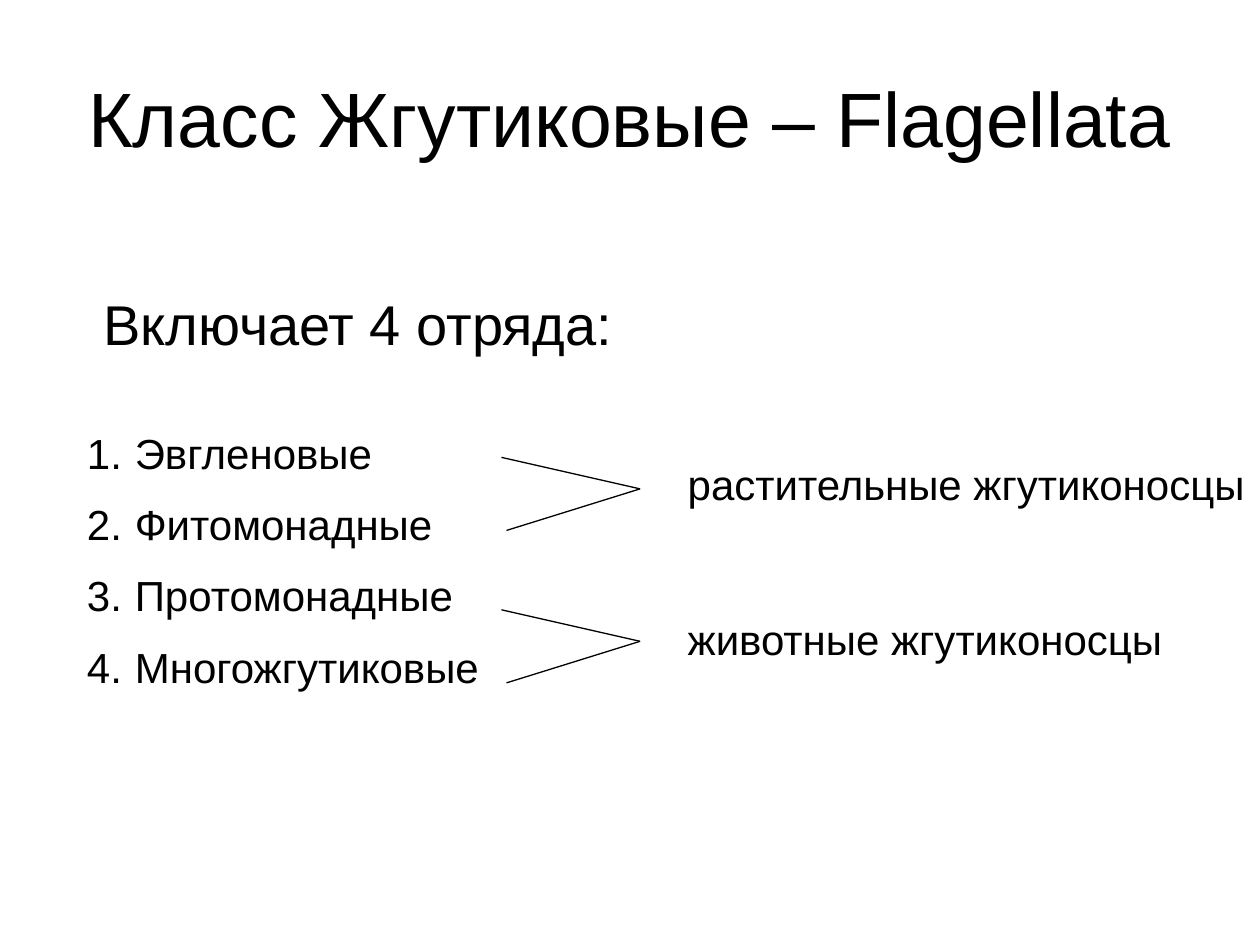
from lxml import etree
from pptx import Presentation
from pptx import util as u
from pptx.dml.color import RGBColor
from pptx.enum import shapes, text
from pptx.oxml.ns import qn

INK = "000000"
ORDERS = ["Эвгленовые", "Фитомонадные", "Протомонадные", "Многожгутиковые"]
GROUPS = ["растительные жгутиконосцы", "животные жгутиконосцы"]


def paint(fmt, tone):
    """Set a colour format from a hex string."""
    fmt.rgb = RGBColor.from_string(tone)


def write(para, words, size):
    """Add one run of text to a paragraph."""
    run = para.add_run()
    run.text = words
    run.font.name = "Arial"
    run.font.size = u.Pt(size)
    paint(run.font.color, INK)


def place(shape, box):
    """Move a shape to a box given in inches."""
    shape.left, shape.top, shape.width, shape.height = map(u.Inches, box)


def head(slide, box, words):
    """Fill the title placeholder."""
    title = slide.shapes.title
    place(title, box)
    frame = title.text_frame
    frame.auto_size = text.MSO_AUTO_SIZE.NONE
    frame.vertical_anchor = text.MSO_ANCHOR.MIDDLE
    para = frame.paragraphs[0]
    para.alignment = text.PP_ALIGN.CENTER
    write(para, words, 44)


def label(slide, box, words, size, wrap=True):
    """Add a line of plain text."""
    shape = slide.shapes.add_textbox(*map(u.Inches, box))
    shape.text_frame.word_wrap = wrap
    write(shape.text_frame.paragraphs[0], words, size)


def roster(slide, box, items):
    """Fill the body placeholder with a numbered list."""
    body = slide.placeholders[1]
    place(body, box)
    frame = body.text_frame
    frame.auto_size = text.MSO_AUTO_SIZE.NONE
    frame.vertical_anchor = text.MSO_ANCHOR.TOP
    frame.margin_right = 0
    for i, item in enumerate(items):
        para = frame.add_paragraph() if i else frame.paragraphs[0]
        props = para._p.get_or_add_pPr()
        props.set("marL", str(u.Inches(0.38)))
        props.set("indent", str(-u.Inches(0.38)))
        font = etree.SubElement(props, qn("a:buFont"))
        font.set("typeface", "Arial")
        mark = etree.SubElement(props, qn("a:buAutoNum"))
        mark.set("type", "arabicPeriod")
        para.space_before = u.Pt(12 if i else 0)
        write(para, item, 24)


def wedge(slide, box):
    """Draw two lines that meet at the right of the box."""
    left, top, width, height = box
    tip = left + width, top + 0.25
    group = slide.shapes.add_group_shape()
    for x, y in ((left, top), (left + 0.04, top + height)):
        ends = map(u.Inches, (x, y, *tip))
        line = group.shapes.add_connector(shapes.MSO_CONNECTOR.STRAIGHT, *ends)
        line.line.width = u.Pt(0.75)
        paint(line.line.color, INK)
        etree.SubElement(line._element.spPr, qn("a:effectLst"))


def main():
    """Build and save the slide."""
    deck = Presentation()
    deck.slide_width, deck.slide_height = u.Inches(10), u.Inches(7.5)
    slide = deck.slides.add_slide(deck.slide_layouts[1])
    head(slide, (0.5, 0.3, 9, 1.25), "Класс Жгутиковые – Flagellata")
    label(slide, (0.72, 2.25, 4.27, 0.63), "Включает 4 отряда:", 32, False)
    roster(slide, (0.59, 3.34, 3.31, 2.3), ORDERS)
    for i, name in enumerate(GROUPS):
        label(slide, (5.36, 3.59 + 1.23 * i, 4.64, 0.5), name, 24)
        wedge(slide, (3.98, 3.63 + 1.21 * i, 1.1, 0.58))
    deck.save("out.pptx")


if __name__ == "__main__":
    main()
